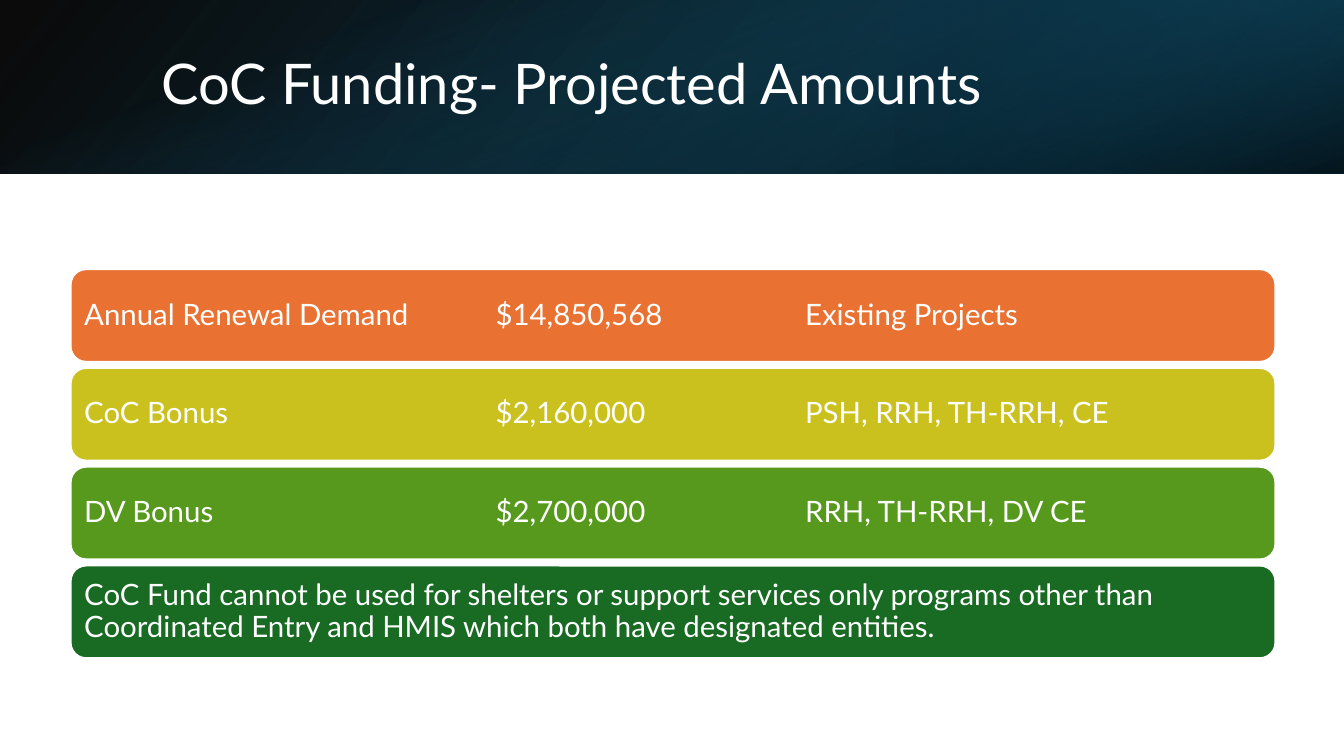
import pptx
import pptx.util
import pptx.dml.color
import pptx.enum.shapes
import pptx.enum.text
import pptx.oxml.ns
from lxml import etree

Inches = pptx.util.Inches
Pt = pptx.util.Pt
RGBColor = pptx.dml.color.RGBColor
MIDDLE = pptx.enum.text.MSO_ANCHOR.MIDDLE
LEFT = pptx.enum.text.PP_ALIGN.LEFT
qn = pptx.oxml.ns.qn

WHITE = RGBColor(0xFF, 0xFF, 0xFF)
BLACK = RGBColor(0x00, 0x00, 0x00)
NAVY = RGBColor(0x10, 0x48, 0x62)
DEEP_BLUE = RGBColor(0x0B, 0x30, 0x41)
TEAL = RGBColor(0x15, 0x60, 0x82)
ORANGE = RGBColor(0xE9, 0x71, 0x32)
YELLOW = RGBColor(0xCB, 0xC1, 0x1E)
LIME = RGBColor(0x56, 0x99, 0x1D)
GREEN = RGBColor(0x19, 0x6B, 0x24)

WIDTH, HEIGHT = 13.33, 7.5
HEADER = 1.72
ROW_LEFT, ROW_TOP, ROW_WIDTH, ROW_HEIGHT = 0.7, 2.67, 11.95, 0.92
ROW_PITCH = 0.98
COLUMN_STOPS = (4.08, 7.15)


def add_panel(kind, left, top, width, height):
    panel = slide.shapes.add_shape(
        kind, Inches(left), Inches(top), Inches(width), Inches(height))
    panel.shadow.inherit = False
    return panel


def write_line(frame, wording, size):
    frame.word_wrap = True
    frame.vertical_anchor = MIDDLE
    line = frame.paragraphs[0]
    line.alignment = LEFT
    line.line_spacing = 0.9
    run = line.add_run()
    run.text = wording
    run.font.size = Pt(size)
    run.font.name = "Lato"
    run.font.color.rgb = WHITE
    return line


deck = pptx.Presentation()
deck.slide_width = Inches(WIDTH)
deck.slide_height = Inches(HEIGHT)
slide = deck.slides.add_slide(deck.slide_layouts[5])

header_layers = [
    ((0, 0, WIDTH, HEADER), 0, True, 140,
     [(0, BLACK, 96), (1, NAVY, 100)]),
    ((WIDTH * 2 / 3, 0, WIDTH / 3, HEADER), 180, True, 320,
     [(0.19, DEEP_BLUE, 68), (1, TEAL, 79)]),
    (((WIDTH - HEADER) / 2, (HEADER - WIDTH) / 2, HEADER, WIDTH), 90, False, 340,
     [(0.23, TEAL, 0), (0.99, BLACK, 74)]),
]
header_layers[0][4][1] = (1, NAVY, 100)
for box, rotation, mirrored, angle, stops in header_layers:
    layer = add_panel(pptx.enum.shapes.MSO_SHAPE.RECTANGLE, *box)
    layer.rotation = rotation
    if mirrored:
        layer._element.spPr.find(qn("a:xfrm")).set("flipH", "1")
    layer.line.fill.background()
    layer.fill.gradient()
    layer.fill.gradient_angle = 360 - angle
    for stop, (position, colour, opacity) in zip(layer.fill.gradient_stops, stops):
        stop.position = position
        stop.color.rgb = colour
    for tint, (position, colour, opacity) in zip(
            layer._element.spPr.iter(qn("a:srgbClr")), stops):
        etree.SubElement(tint, qn("a:alpha")).set("val", str(opacity * 1000))

heading = slide.shapes.title
slide.shapes._spTree.append(heading._element)
heading.left, heading.top = Inches(1.5), Inches(0.38)
heading.width, heading.height = Inches(10.98), Inches(0.96)
heading.text_frame.auto_size = pptx.enum.text.MSO_AUTO_SIZE.NONE
write_line(heading.text_frame, "CoC Funding- Projected Amounts", 40)

funding_rows = [
    (ORANGE, ["Annual Renewal Demand", "$14,850,568", "Existing Projects"]),
    (YELLOW, ["CoC Bonus", "$2,160,000", "PSH, RRH, TH-RRH, CE"]),
    (LIME, ["DV Bonus", "$2,700,000", "RRH, TH-RRH, DV CE"]),
    (GREEN, ["CoC Fund cannot be used for shelters or support services only "
             "programs other than Coordinated Entry and HMIS which both have "
             "designated entities."]),
]
for index, (colour, cells) in enumerate(funding_rows):
    bar = add_panel(pptx.enum.shapes.MSO_SHAPE.ROUNDED_RECTANGLE, ROW_LEFT,
                    ROW_TOP + index * ROW_PITCH, ROW_WIDTH, ROW_HEIGHT)
    bar.fill.solid()
    bar.fill.fore_color.rgb = colour
    bar.line.color.rgb = WHITE
    bar.line.width = Pt(1.5)
    frame = bar.text_frame
    frame.margin_left = frame.margin_right = Inches(0.09)
    frame.margin_top = frame.margin_bottom = Inches(0.05)
    line = write_line(frame, "\t".join(cells), 21)
    if len(cells) > 1:
        tab_list = etree.SubElement(line._p.get_or_add_pPr(), qn("a:tabLst"))
        for column in COLUMN_STOPS:
            tab = etree.SubElement(tab_list, qn("a:tab"))
            tab.set("pos", str(Inches(column)))
            tab.set("algn", "l")

deck.save("out.pptx")
